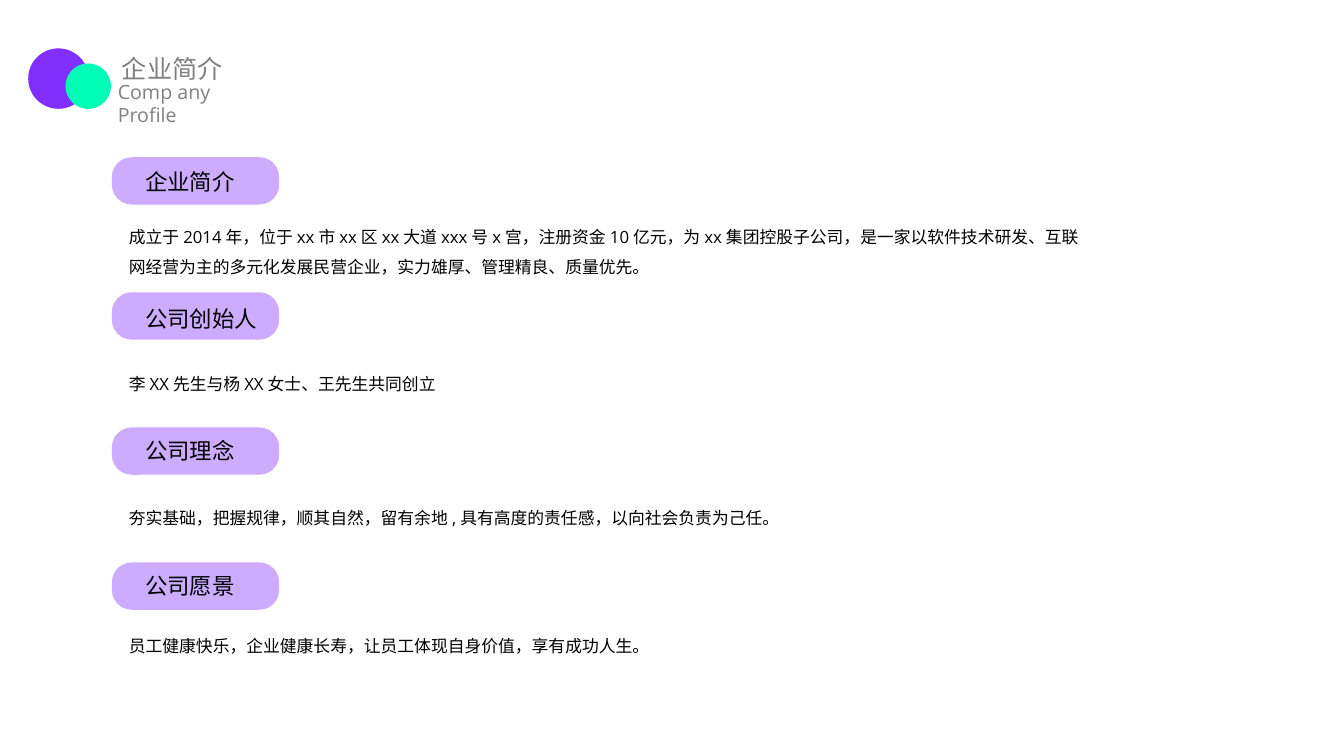
from dataclasses import dataclass
from pptx import Presentation
from pptx.dml.color import RGBColor as Rgb
from pptx.enum.shapes import MSO_SHAPE as Kind
from pptx.enum.text import MSO_ANCHOR as Anchor, PP_ALIGN as Align
from pptx.util import Inches, Pt

TITLE = "企业简介"
SUB = "Comp any Profile"
PARTS = [
    {"head": "企业简介", "drop": 0.06, "gap": 0.54, "size": (9.64, 0.67), "lead": 1.5,
     "body": "成立于2014年，位于xx市xx区xx大道xxx号x宫，注册资金10亿元，为xx集团控股子公司，"
             "是一家以软件技术研发、互联网经营为主的多元化发展民营企业，实力雄厚、管理精良、质量优先。"},
    {"head": "公司创始人", "drop": 0.08, "gap": 0.76,
     "body": "李XX先生与杨XX女士、王先生共同创立"},
    {"head": "公司理念", "drop": 0.05, "gap": 0.75,
     "body": "夯实基础，把握规律，顺其自然，留有余地,具有高度的责任感，以向社会负责为己任。"},
    {"head": "公司愿景", "drop": 0.05, "gap": 0.68,
     "body": "员工健康快乐，企业健康长寿，让员工体现自身价值，享有成功人生。"},
]


@dataclass(frozen=True)
class Theme:
    font: str = "Open Sans"
    back: str = "FFFFFF"
    ink: str = "000000"
    gray: str = "808080"
    pill: str = "CDABFF"
    disc: str = "812EFF"
    dot: str = "00FFB6"
    title: int = 18
    head: int = 16
    sub: int = 14
    body: int = 12


LOOK = Theme()
WIDE, HIGH = 13.33, 7.5
LEFT, HEAD, BODY = 1.11, 1.34, 1.18
TOP, STEP = 1.56, 1.34
PILL = (1.66, 0.47)
BASE = 1.08


def place(x, y, w, h):
    return [Inches(n) for n in (x, y, w, h)]


def shape(slide, kind, box, color):
    item = slide.shapes.add_shape(kind, *place(*box))
    item.shadow.inherit = False
    item.fill.solid()
    item.fill.fore_color.rgb = Rgb.from_string(color)
    item.line.fill.background()
    return item


def write(slide, text, box, size, color=LOOK.ink, lead=1.0, wrap=True, item=None):
    spot = place(*box)
    if item is None:
        item = slide.shapes.add_textbox(*spot)
    item.left, item.top, item.width, item.height = spot
    frame = item.text_frame
    frame.word_wrap = wrap
    frame.vertical_anchor = Anchor.TOP
    para = frame.paragraphs[0]
    para.alignment = Align.LEFT
    para.line_spacing = lead
    run = para.add_run()
    run.text = text
    run.font.name = LOOK.font
    run.font.size = Pt(size)
    run.font.color.rgb = Rgb.from_string(color)


def main():
    deck = Presentation()
    deck.slide_width, deck.slide_height = Inches(WIDE), Inches(HIGH)
    slide = deck.slides.add_slide(deck.slide_layouts[5])
    slide.background.fill.solid()
    slide.background.fill.fore_color.rgb = Rgb.from_string(LOOK.back)

    write(slide, TITLE, (LEFT, 0.48, PILL[0], 0.4), LOOK.title, LOOK.gray,
          item=slide.shapes.title)
    write(slide, SUB, (1.07, 0.74, 1.7, 0.34), LOOK.sub, LOOK.gray, wrap=False)
    for x, size, color in ((0.28, 0.6, LOOK.disc), (0.65, 0.45, LOOK.dot)):
        shape(slide, Kind.OVAL, (x, BASE - size, size, size), color)

    for row, part in enumerate(PARTS):
        y = TOP + row * STEP
        pill = shape(slide, Kind.ROUNDED_RECTANGLE, (LEFT, y, *PILL), LOOK.pill)
        pill.adjustments[0] = 0.42
        write(slide, part["head"], (HEAD, y + part["drop"], 2.35, 0.37), LOOK.head)
        size = part.get("size", (6.57, 0.3))
        write(slide, part["body"], (BODY, y + part["gap"], *size), LOOK.body,
              lead=part.get("lead", 1.0))

    deck.save("out.pptx")


if __name__ == "__main__":
    main()
